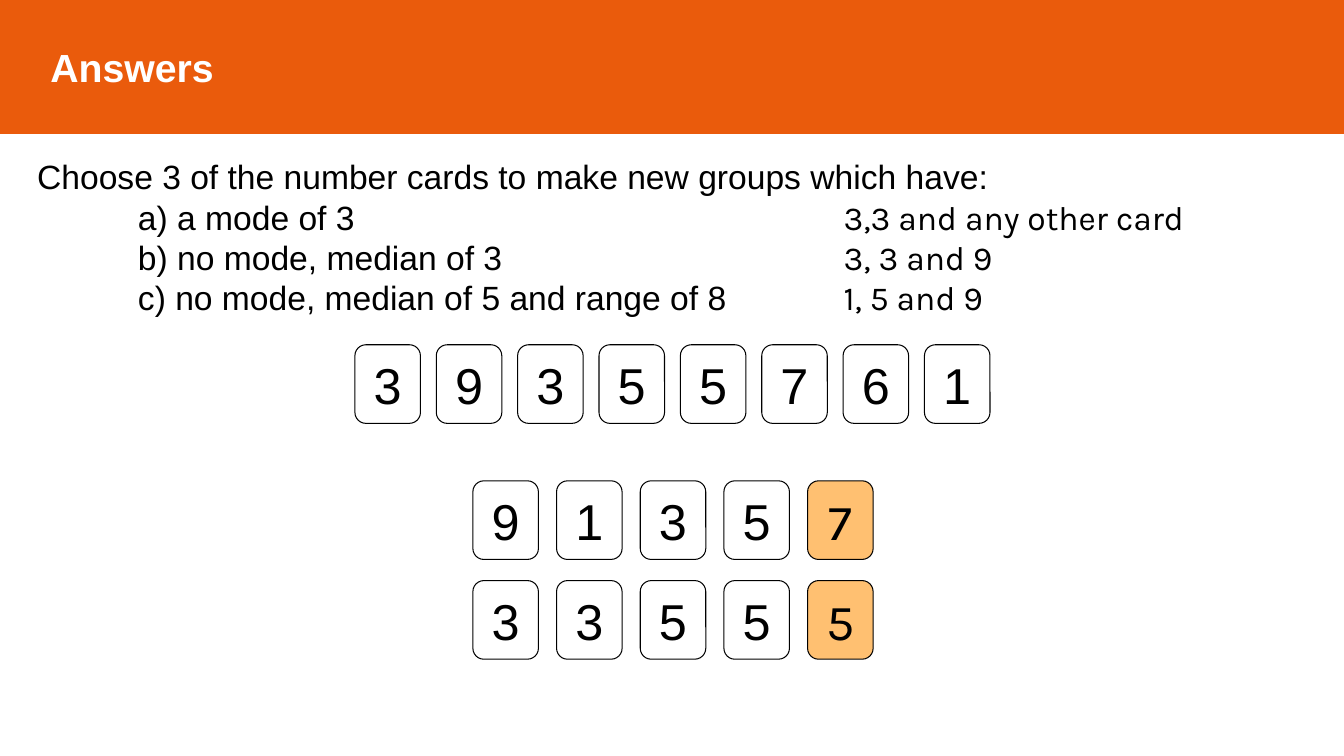
"""Build the answers slide about number cards, mode, median and range."""
from lxml import etree
from pptx import Presentation
from pptx import util as u
from pptx.dml.color import RGBColor
from pptx.enum import shapes, text
from pptx.oxml.ns import qn

COLORS = {"orange": "EA5B0C", "peach": "FFC071", "white": "FFFFFF", "black": "000000"}
CARD_W, CARD_H = 0.65, 0.78
QUESTION = "Choose 3 of the number cards to make new groups which have:"
PARTS = [
    ("a) a mode of 3", "3,3 and any other card"),
    ("b) no mode, median of 3", "3, 3 and 9"),
    ("c) no mode, median of 5 and range of 8", "1, 5 and 9"),
]


def rgb(name):
    """Return the named colour."""
    return RGBColor.from_string(COLORS[name])


def style(r, size, color="black", font="Arial", bold=False):
    """Format one run."""
    r.font.name, r.font.size, r.font.bold = font, u.Pt(size), bold
    r.font.color.rgb = rgb(color)


def add_box(s, kind, x, y, w, h, fill, line, width):
    """Add a filled and outlined preset shape."""
    sp = s.shapes.add_shape(kind, u.Inches(x), u.Inches(y), u.Inches(w), u.Inches(h))
    sp.shadow.inherit = False
    sp.fill.solid()
    sp.fill.fore_color.rgb = rgb(fill)
    sp.line.color.rgb = rgb(line)
    sp.line.width = u.Pt(width)
    sp.text_frame.vertical_anchor = text.MSO_ANCHOR.MIDDLE
    return sp


def add_banner(s, title):
    """Add the title banner across the top."""
    sp = add_box(s, shapes.MSO_SHAPE.RECTANGLE, 0, 0, 13.33, 1.32, "orange", "orange", 1)
    tf = sp.text_frame
    tf.margin_left = u.Inches(0.5)
    tf.text = title
    p = tf.paragraphs[0]
    p.alignment = text.PP_ALIGN.LEFT
    style(p.runs[0], 28, "white", bold=True)


def set_tabs(p, stops):
    """Give a paragraph left tab stops at the given inches."""
    tabs = etree.SubElement(p._p.get_or_add_pPr(), qn("a:tabLst"))
    for stop in stops:
        etree.SubElement(tabs, qn("a:tab"), pos=str(u.Inches(stop)), algn="l")


def add_questions(s):
    """Add the question with its parts and their answers."""
    sp = s.shapes.add_textbox(u.Inches(0.27), u.Inches(1.5), u.Inches(13.06), u.Inches(1.8))
    tf = sp.text_frame
    tf.word_wrap = True
    tf.text = QUESTION
    style(tf.paragraphs[0].runs[0], 24)
    for part, answer in PARTS:
        p = tf.add_paragraph()
        set_tabs(p, (1, 8))
        for words, font in ((part, "Arial"), (answer, "Karla")):
            r = p.add_run()
            r.text = "\t" + words
            style(r, 24, font=font)


def add_cards(s, digits, x, y, pitch, last_marked=False):
    """Add a row of number cards, with the last one highlighted if asked."""
    for i, digit in enumerate(digits):
        marked = last_marked and i == len(digits) - 1
        sp = add_box(s, shapes.MSO_SHAPE.ROUNDED_RECTANGLE, x + i * pitch, y, CARD_W, CARD_H,
                     "peach" if marked else "white", "black", 0.75)
        sp.text_frame.text = digit
        p = sp.text_frame.paragraphs[0]
        p.alignment = text.PP_ALIGN.CENTER
        style(p.runs[0], 36, font="Karla" if marked else "Arial")


def main():
    """Build and save the slide."""
    prs = Presentation()
    prs.slide_width, prs.slide_height = u.Inches(13.33), u.Inches(7.5)
    s = prs.slides.add_slide(prs.slide_layouts[6])
    add_banner(s, "Answers")
    add_questions(s)
    add_cards(s, "39355761", 3.52, 3.42, 0.807)
    add_cards(s, "91357", 4.69, 4.77, 0.83, last_marked=True)
    add_cards(s, "33555", 4.69, 5.76, 0.83, last_marked=True)
    prs.save("out.pptx")


if __name__ == "__main__":
    main()
